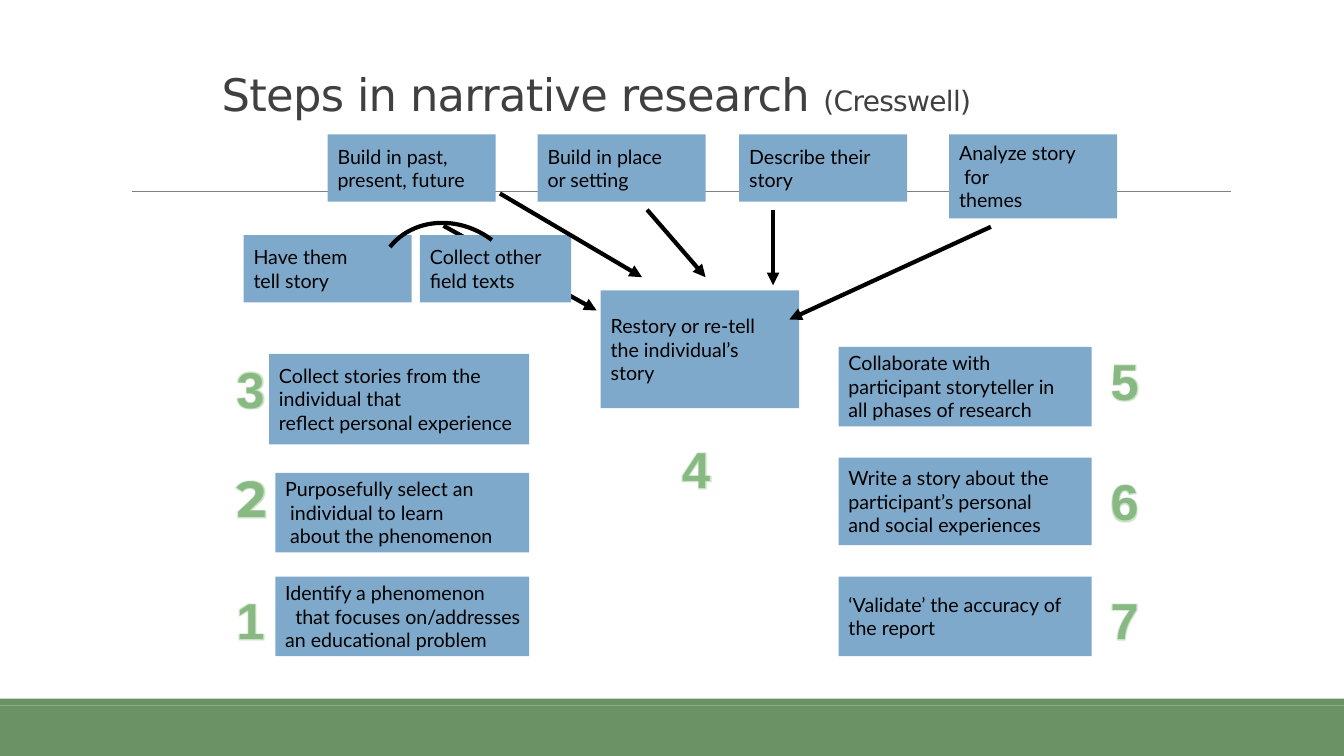
from collections import namedtuple

from lxml import etree
from pptx import Presentation
from pptx.dml.color import RGBColor
from pptx.enum.shapes import MSO_CONNECTOR as CONNECTOR, MSO_SHAPE as SHAPE
from pptx.enum.text import MSO_ANCHOR as ANCHOR, PP_ALIGN as ALIGN
from pptx.oxml.ns import qn
from pptx.util import Pt

Box = namedtuple("Box", "left top width height")

COLORS = {
    "footer": "6B9264", "rule": "808080", "title": "404040", "card": "7EA9CA",
    "ink": "000000", "number": "89B982", "glow": "C9E3C5",
}
TITLE_FONT = {"name": "DejaVu Sans", "size": Pt(32)}
CARD_FONT = {"name": "Lato", "size": Pt(14)}
NUMBER_FONT = {"name": "Arial", "size": Pt(36), "bold": True}
SPACE_INDENT = 3.6

# Lines of each card, with its box relative to the region
SOURCES = [
    (Box(60, 0, 120, 48), ["Build in past,", "present, future"]),
    (Box(210, 0, 120, 48), ["Build in place", "or setting"]),
    (Box(354, 0, 120, 48), ["Describe their", "story"]),
    (Box(504, 0, 120, 60), ["Analyze story", " for", "themes"]),
    (Box(0, 72, 120, 48), ["Have them", "tell story"]),
    (Box(126, 72, 108, 48), ["Collect other", "field texts"]),
]
# Number, its top, its font, then the card's box and lines
FIRST_STEPS = [
    ("3", 6, "Arial", Box(30.2, 6.7, 185.8, 64.8),
     ["Collect stories from the", "individual that", "reflect personal experience"]),
    ("2", 83.8, "Montserrat", Box(34.6, 91.7, 181.4, 56.9),
     ["Purposefully select an", " individual to learn", " about the phenomenon"]),
    ("1", 170.9, "Arial", Box(34.6, 165.8, 181.4, 56.9),
     ["Identify a phenomenon", "  that focuses on/addresses", "an educational problem"]),
]
LAST_STEPS = [
    ("5", 0.2, "Arial", Box(0, 1.7, 180.7, 56.9),
     ["Collaborate with", "participant storyteller in", "all phases of research"]),
    ("6", 86.6, "Arial", Box(0, 80.9, 180.7, 62.6),
     ["Write a story about the", "participant’s personal", "and social experiences"]),
    ("7", 170.9, "Arial", Box(0, 165.8, 180.7, 56.9),
     ["‘Validate’ the accuracy of", "the report"]),
]
RETELLING = [("4", 102.2, "Arial", Box(0, 0, 141.8, 84.2),
              ["Restory or re-tell", "the individual’s", "story"])]
# Start and end of each arrow, relative to the sources region
ARROW_BEHIND = (142.8, 65.3, 252.2, 125.8)
ARROWS = [
    (533.8, 66, 389.8, 132.2),
    (378.2, 53.8, 378.2, 107.8),
    (288.2, 53.8, 330, 102),
    (183.1, 42.2, 284.6, 102),
]
ARC = [(104.6, 80.4), (121.2, 59.5), (153.6, 57.4), (177.4, 75.4)]


def color(name):
    return RGBColor.from_string(COLORS[name])


def points(values):
    return [Pt(value) for value in values]


def inside(region, box):
    return Box(region.left + box.left, region.top + box.top, box.width, box.height)


def write(paragraph, text, font, color_name):
    run = paragraph.add_run()
    run.text = text
    for attribute, value in font.items():
        setattr(run.font, attribute, value)
    run.font.color.rgb = color(color_name)
    return run


def rectangle(slide, box, fill):
    shape = slide.shapes.add_shape(SHAPE.RECTANGLE, *points(box))
    shape.shadow.inherit = False
    shape.fill.solid()
    shape.fill.fore_color.rgb = color(fill)
    shape.line.fill.background()
    return shape


def line(slide, ends, color_name, width, arrow=False):
    connector = slide.shapes.add_connector(CONNECTOR.STRAIGHT, *points(ends))
    connector.line.color.rgb = color(color_name)
    connector.line.width = Pt(width)
    if arrow:
        etree.SubElement(connector.line._get_or_add_ln(), qn("a:tailEnd"), type="triangle")
    etree.SubElement(connector._element.spPr, qn("a:effectLst"))


def card(slide, box, lines):
    """Blue box of short lines; a leading space becomes a left indent."""
    frame = rectangle(slide, box, "card").text_frame
    frame.word_wrap = True
    frame.vertical_anchor = ANCHOR.MIDDLE
    frame.margin_right = 0
    for index, text in enumerate(lines):
        paragraph = frame.paragraphs[0] if index == 0 else frame.add_paragraph()
        paragraph.alignment = ALIGN.LEFT
        words = text.lstrip()
        indent = (len(text) - len(words)) * SPACE_INDENT
        if indent:
            paragraph._p.get_or_add_pPr().set("marL", str(Pt(indent)))
        write(paragraph, words, CARD_FONT, "ink")


def step_number(slide, box, digit, font_name):
    frame = slide.shapes.add_textbox(*points(box)).text_frame
    frame.word_wrap = True
    run = write(frame.paragraphs[0], digit, NUMBER_FONT | {"name": font_name}, "number")
    properties = run.font._element
    properties.set("spc", "300")
    effects = etree.Element(qn("a:effectLst"))
    glow = etree.SubElement(effects, qn("a:glow"), rad=str(Pt(2)))
    etree.SubElement(glow, qn("a:srgbClr"), val=COLORS["glow"])
    properties.find(qn("a:solidFill")).addnext(effects)


def steps(slide, region, rows, number_left):
    for digit, number_top, font_name, box, lines in rows:
        card(slide, inside(region, box), lines)
        number_box = Box(number_left, number_top, 40, 51)
        step_number(slide, inside(region, number_box), digit, font_name)


def sources(slide, region):
    for box, lines in SOURCES:
        card(slide, inside(region, box), lines)


def arrows(slide, region, ends_list):
    for x1, y1, x2, y2 in ends_list:
        ends = (region.left + x1, region.top + y1, region.left + x2, region.top + y2)
        line(slide, ends, "ink", 3, arrow=True)


def linking_arc(slide, region, segments=24):
    """Cubic curve joining the two lower source cards."""
    curve = []
    for index in range(segments + 1):
        t = index / segments
        weights = ((1 - t) ** 3, 3 * t * (1 - t) ** 2, 3 * t * t * (1 - t), t ** 3)
        x, y = (sum(w * p[axis] for w, p in zip(weights, ARC)) for axis in (0, 1))
        curve.append((Pt(region.left + x), Pt(region.top + y)))
    builder = slide.shapes.build_freeform(*curve[0])
    builder.add_line_segments(curve[1:], close=False)
    arc = builder.convert_to_shape()
    arc.shadow.inherit = False
    arc.fill.background()
    arc.line.color.rgb = color("ink")
    arc.line.width = Pt(3)


def title(slide, box):
    frame = slide.shapes.add_textbox(*points(box)).text_frame
    frame.word_wrap = True
    frame.vertical_anchor = ANCHOR.BOTTOM
    heading = frame.paragraphs[0]
    heading.line_spacing = 0.85
    for text, size in (("Steps in narrative research ", 32), ("(Cresswell)", 20)):
        run = write(heading, text, TITLE_FONT | {"size": Pt(size)}, "title")
        run.font._element.set("spc", "-50")


def footer(slide, box, strip=5):
    rectangle(slide, Box(box.left, box.top + strip, box.width, box.height - strip), "footer")
    rectangle(slide, Box(box.left, box.top, box.width, strip), "footer")


def main():
    presentation = Presentation()
    presentation.slide_width, presentation.slide_height = Pt(960), Pt(540)
    slide = presentation.slides.add_slide(presentation.slide_layouts[6])
    source_region = Box(174, 96, 624, 120)

    footer(slide, Box(0, 499, 960, 41))
    line(slide, (94.3, 136.8, 879.1, 136.8), "rule", 0.5)
    arrows(slide, source_region, [ARROW_BEHIND])
    title(slide, Box(151.2, 0, 648, 90))
    steps(slide, Box(162, 246, 216, 222.7), FIRST_STEPS, number_left=0)
    steps(slide, Box(429.1, 207.4, 141.8, 153), RETELLING, number_left=51.1)
    steps(slide, Box(599, 246, 227, 222.7), LAST_STEPS, number_left=187.2)
    sources(slide, source_region)
    arrows(slide, source_region, ARROWS)
    linking_arc(slide, source_region)
    presentation.save("out.pptx")


if __name__ == "__main__":
    main()
